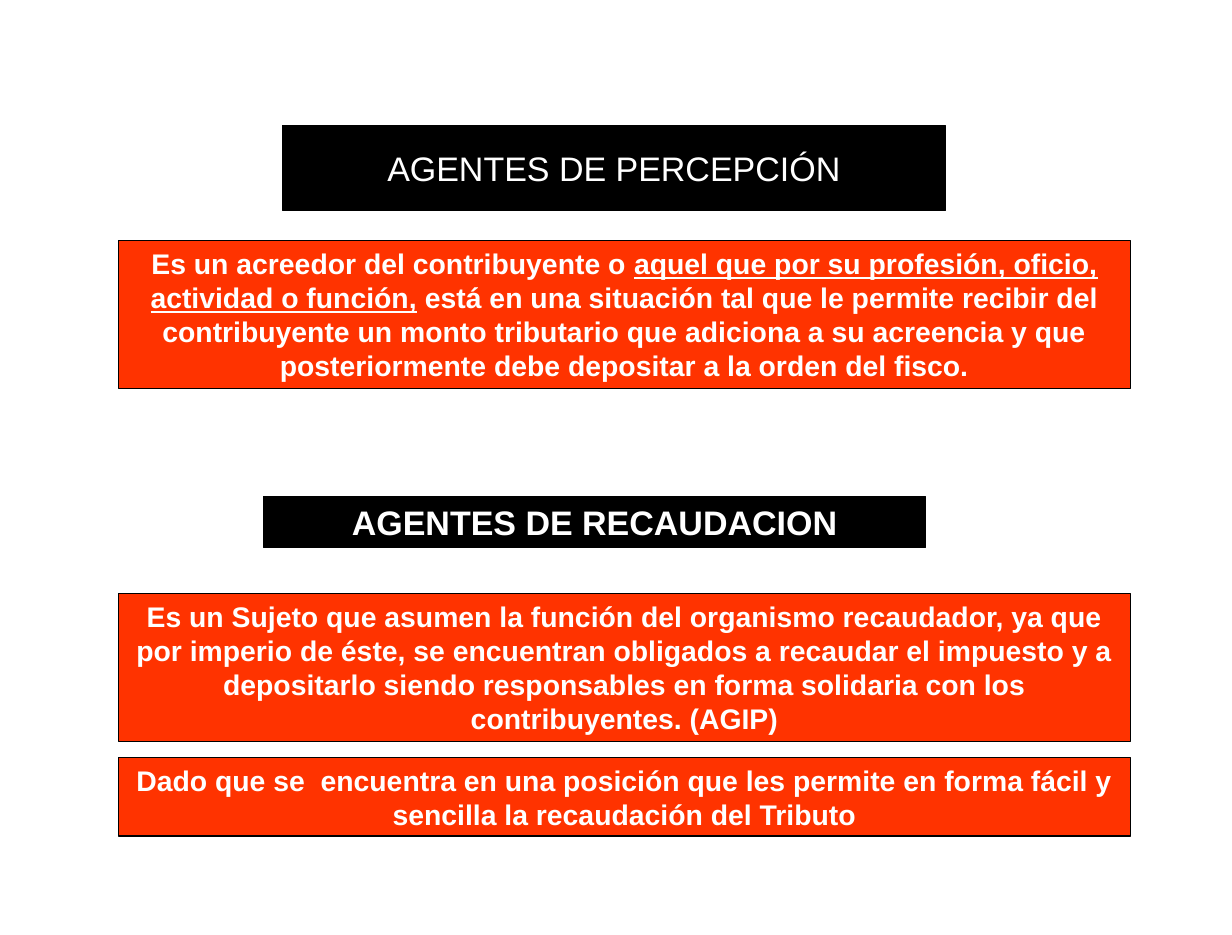
from pptx import Presentation
from pptx.dml.color import RGBColor
from pptx.enum import shapes, text
from pptx.util import Pt

COLORS = {"heading": "000000", "panel": "FF3300", "line": "000000", "text": "FFFFFF"}
HEADING_SIZE = (468, 36)
PANEL_LEFT, PANEL_WIDTH = 83.75, 714.24


def color(name):
    return RGBColor.from_string(COLORS[name])


def format_box(box, place, fill, spans, size, bold):
    """Place a box and fill it with one centred paragraph of (text, underlined) spans."""
    box.left, box.top, box.width, box.height = map(Pt, place)
    box.fill.solid()
    box.fill.fore_color.rgb = color(fill)
    box.line.color.rgb = color("line")
    box.line.width = Pt(0.75)

    frame = box.text_frame
    frame.word_wrap = True
    frame.vertical_anchor = text.MSO_ANCHOR.MIDDLE
    frame.auto_size = text.MSO_AUTO_SIZE.SHAPE_TO_FIT_TEXT

    para = frame.paragraphs[0]
    para.alignment = text.PP_ALIGN.CENTER
    para.font.name = "Arial"
    para.font.size = Pt(size)
    para.font.bold = bold
    para.font.color.rgb = color("text")
    for words, underlined in spans:
        span = para.add_run()
        span.text = words
        if underlined:
            span.font.underline = True


def add_rectangle(page):
    box = page.shapes.add_shape(shapes.MSO_SHAPE.RECTANGLE, 0, 0, Pt(1), Pt(1))
    box.shadow.inherit = False
    return box


def format_heading(box, left, top, words, bold):
    format_box(box, (left, top, *HEADING_SIZE), "heading", [(words, False)], 24, bold)


def add_panel(page, top, height, *spans):
    place = (PANEL_LEFT, top, PANEL_WIDTH, height)
    format_box(add_rectangle(page), place, "panel", spans, 20, True)


def main():
    deck = Presentation()
    deck.slide_width, deck.slide_height = Pt(869.76), Pt(660.24)
    page = deck.slides.add_slide(deck.slide_layouts[5])

    # Perception agents
    format_heading(page.shapes.title, 199.44, 100.8, "AGENTES DE PERCEPCIÓN", False)
    add_panel(
        page, 169.92, 104.4,
        ("Es un acreedor del contribuyente o ", False),
        ("aquel que por su profesión, oficio, actividad o función,", True),
        (" está en una situación tal que le permite recibir del contribuyente "
         "un monto tributario que adiciona a su acreencia y que posteriormente "
         "debe depositar a la orden del fisco.", False),
    )

    # Collection agents
    format_heading(add_rectangle(page), 185.76, 350.64, "AGENTES DE RECAUDACION", True)
    add_panel(
        page, 419.04, 104.4,
        ("Es un Sujeto que asumen la función del organismo recaudador, ya que "
         "por imperio de éste, se encuentran obligados a recaudar el impuesto y a "
         "depositarlo siendo responsables en forma solidaria con los "
         "contribuyentes. (AGIP)", False),
    )
    add_panel(
        page, 534.96, 55.44,
        ("Dado que se  encuentra en una posición que les permite en forma fácil y "
         "sencilla la recaudación del Tributo", False),
    )

    deck.save("out.pptx")


if __name__ == "__main__":
    main()
